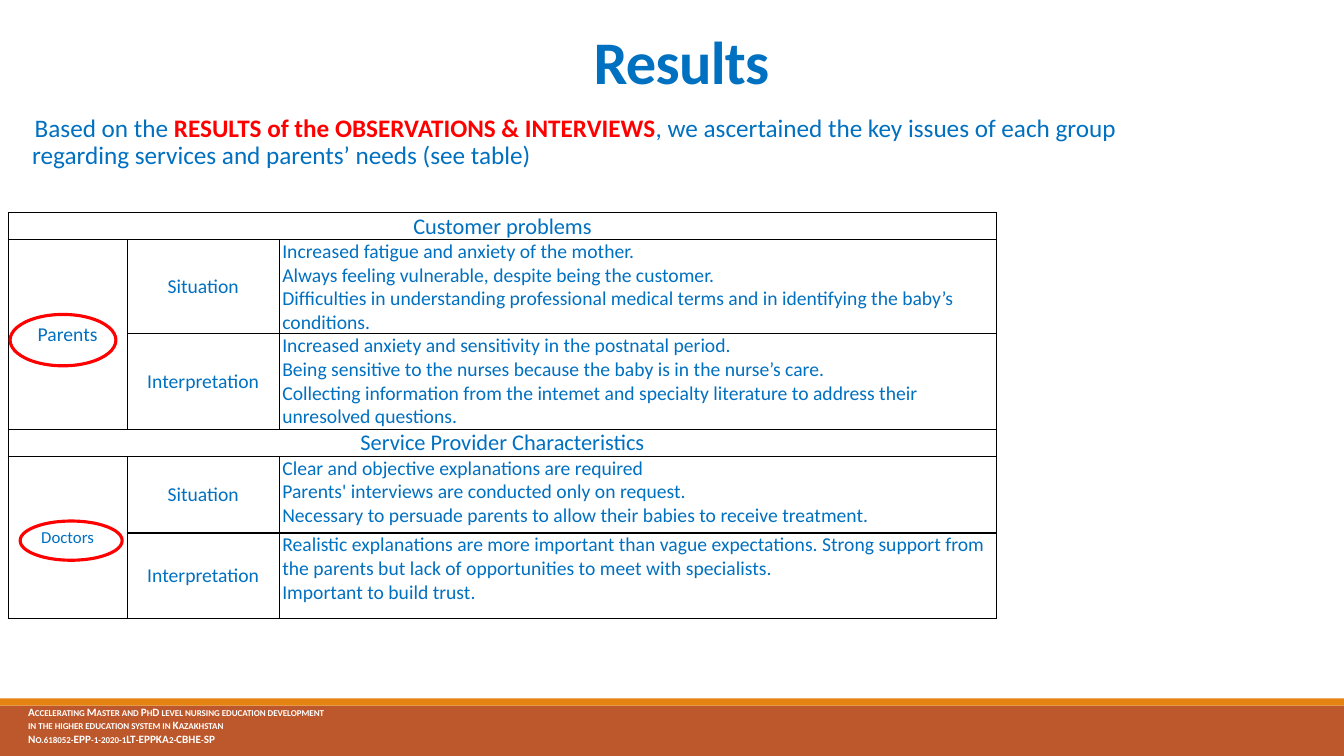
from lxml import etree
from pptx import Presentation
from pptx import util as u
from pptx.dml.color import RGBColor
from pptx.enum import shapes, text
from pptx.oxml import ns

Pt = u.Pt
COLORS = {"blue": "0070C0", "red": "FF0000", "white": "FFFFFF", "black": "000000",
          "rust": "BD582C", "orange": "E48312"}
CENTER = text.PP_ALIGN.CENTER
MIDDLE = text.MSO_ANCHOR.MIDDLE
TOP = text.MSO_ANCHOR.TOP

FOOTER = ["Accelerating Master and PhD level nursing education development",
          "in the higher education system in Kazakhstan",
          "No.618052-EPP-1-2020-1LT-EPPKA2-CBHE-SP"]

SECTIONS = [
    ("Customer problems", "Parents", 14, [
        ("Situation", [
            "Increased fatigue and anxiety of the mother.",
            "Always feeling vulnerable, despite being the customer.",
            "Difﬁculties in understanding professional medical terms and in identifying the baby’s conditions."]),
        ("Interpretation", [
            "Increased anxiety and sensitivity in the postnatal period.",
            "Being sensitive to the nurses because the baby is in the nurse’s care.",
            "Collecting information from the intemet and specialty literature to address their unresolved questions."]),
    ]),
    ("Service Provider Characteristics", "Doctors", 12, [
        ("Situation", [
            "Clear and objective explanations are required",
            "Parents' interviews are conducted only on request.",
            "Necessary to persuade parents to allow their babies to receive treatment."]),
        ("Interpretation", [
            "Realistic explanations are more important than vague expectations. "
            "Strong support from the parents but lack of opportunities to meet with specialists.",
            "Important to build trust."]),
    ]),
]
COLUMN_WIDTHS = [85, 108.7, 512.6]
ROW_HEIGHTS = [18, 54.7, 68.4, 15.8, 54.7, 61.2]


def rgb(name):
    return RGBColor.from_string(COLORS[name])


def add_run(paragraph, wording, size=14, color="blue", bold=False, **attributes):
    run = paragraph.add_run()
    run.text = wording
    run.font.name = "Calibri"
    run.font.size = Pt(size)
    run.font.bold = bold
    run.font.color.rgb = rgb(color)
    for key, value in attributes.items():
        run.font._element.set(key, value)


def write_lines(frame, lines, align=None, **format):
    for index, line in enumerate(lines):
        paragraph = frame.paragraphs[0] if index == 0 else frame.add_paragraph()
        paragraph.alignment = align
        add_run(paragraph, line, **format)


def add_bar(slide, top, height, color):
    bar = slide.shapes.add_shape(shapes.MSO_SHAPE.RECTANGLE, 0, Pt(top), Pt(960), Pt(height))
    bar.shadow.inherit = False
    bar.fill.solid()
    bar.fill.fore_color.rgb = rgb(color)
    bar.line.fill.background()


def add_highlight(slide, left, top, width, height):
    ring = slide.shapes.add_shape(shapes.MSO_SHAPE.OVAL, Pt(left), Pt(top), Pt(width), Pt(height))
    ring.shadow.inherit = False
    ring.fill.background()
    ring.line.color.rgb = rgb("red")
    ring.line.width = Pt(2.25)


def add_text_frame(slide, left, top, width, height):
    frame = slide.shapes.add_textbox(Pt(left), Pt(top), Pt(width), Pt(height)).text_frame
    frame.word_wrap = True
    return frame


def add_footer(slide):
    add_bar(slide, 504, 36, "rust")
    add_bar(slide, 498.9, 5.1, "orange")
    frame = add_text_frame(slide, 13, 490.3, 330.5, 65)
    frame.margin_top = Pt(13.4)
    write_lines(frame, FOOTER, size=8, color="white", bold=True, cap="small")


def set_title(slide, wording):
    title = slide.shapes.title
    title.left, title.top, title.width, title.height = Pt(261.4), Pt(41), Pt(450.7), Pt(31.7)
    frame = title.text_frame
    frame.auto_size = text.MSO_AUTO_SIZE.NONE
    frame.vertical_anchor = text.MSO_ANCHOR.BOTTOM
    frame.paragraphs[0].line_spacing = 0.85
    write_lines(frame, [wording], align=CENTER, size=43.2, bold=True, spc="-50")


def add_introduction(slide):
    frame = add_text_frame(slide, 15.8, 79.2, 824.4, 97.9)
    frame.margin_left = frame.margin_right = 0
    paragraph = frame.paragraphs[0]
    paragraph.line_spacing = 0.9
    paragraph.space_after = Pt(2)
    properties = paragraph._p.get_or_add_pPr()
    properties.set("marL", str(Pt(7.2)))
    properties.set("indent", str(Pt(-7.2)))
    bullet_color = etree.SubElement(properties, ns.qn("a:buClr"))
    etree.SubElement(bullet_color, ns.qn("a:srgbClr"), val=COLORS["orange"])
    etree.SubElement(properties, ns.qn("a:buChar"), char=" ")
    add_run(paragraph, "Based on the ", size=18)
    add_run(paragraph, "RESULTS of the OBSERVATIONS & INTERVIEWS", size=18, color="red", bold=True)
    add_run(paragraph, ", we ascertained the key issues of each group regarding services"
            " and parents’ needs (see table)", size=18)


def format_cell(cell):
    cell.margin_left = cell.margin_right = Pt(2.2)
    cell.margin_top = cell.margin_bottom = 0
    properties = cell._tc.get_or_add_tcPr()
    for side in ("lnL", "lnR", "lnT", "lnB"):
        border = etree.SubElement(properties, ns.qn("a:" + side), w=str(Pt(1)))
        fill = etree.SubElement(border, ns.qn("a:solidFill"))
        etree.SubElement(fill, ns.qn("a:srgbClr"), val=COLORS["black"])
    cell.fill.background()


def fill_cell(cell, lines, anchor=TOP, **format):
    cell.vertical_anchor = anchor
    write_lines(cell.text_frame, lines, **format)


def add_issue_table(slide):
    table = slide.shapes.add_table(
        len(ROW_HEIGHTS), len(COLUMN_WIDTHS), Pt(5.8), Pt(151.9),
        Pt(sum(COLUMN_WIDTHS)), Pt(sum(ROW_HEIGHTS))).table
    table.first_row = table.horz_banding = False
    for column, width in zip(table.columns, COLUMN_WIDTHS):
        column.width = Pt(width)
    for row, height in zip(table.rows, ROW_HEIGHTS):
        row.height = Pt(height)
    for cell in table.iter_cells():
        format_cell(cell)
    for number, (heading, group, group_size, issues) in enumerate(SECTIONS):
        first = number * 3
        table.cell(first, 0).merge(table.cell(first, 2))
        table.cell(first + 1, 0).merge(table.cell(first + 2, 0))
        fill_cell(table.cell(first, 0), [heading], align=CENTER, size=16)
        fill_cell(table.cell(first + 1, 0), [group], MIDDLE, align=CENTER, size=group_size)
        for row, (aspect, findings) in enumerate(issues, first + 1):
            fill_cell(table.cell(row, 1), [aspect], MIDDLE, align=CENTER)
            fill_cell(table.cell(row, 2), findings)


def main():
    deck = Presentation()
    deck.slide_width, deck.slide_height = Pt(960), Pt(540)
    slide = deck.slides.add_slide(deck.slide_layouts[5])
    add_footer(slide)
    add_issue_table(slide)
    set_title(slide, "Results")
    add_introduction(slide)
    add_highlight(slide, 14.4, 372.2, 72.9, 28)
    add_highlight(slide, 7.2, 224.6, 75.6, 36.7)
    deck.save("out.pptx")


if __name__ == "__main__":
    main()
